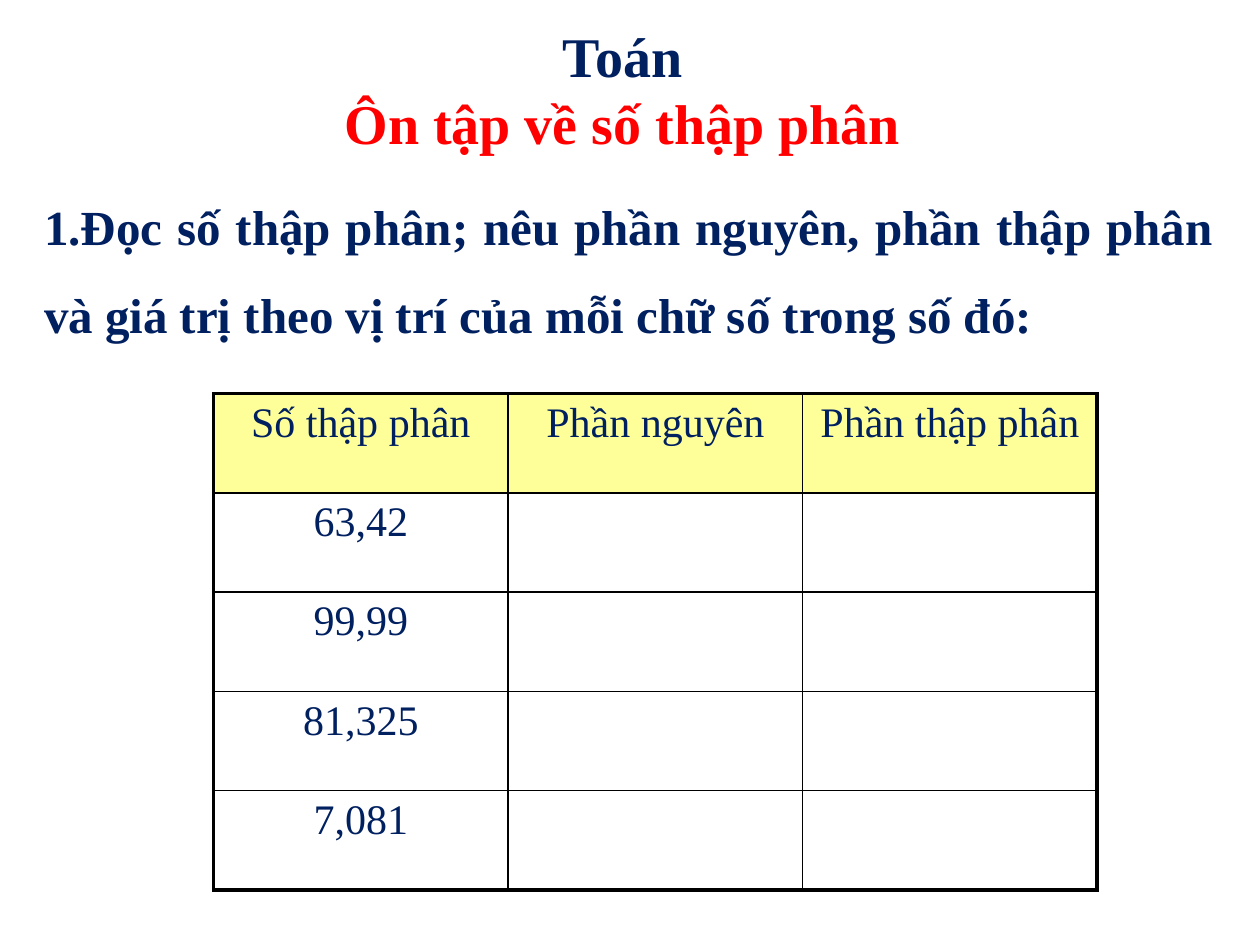
from lxml import etree
from pptx import Presentation
from pptx import util as u
from pptx.dml.color import RGBColor
from pptx.enum import text
from pptx.oxml import ns

COLORS = {"navy": "002060", "red": "FF0000", "header": "FFFF99", "border": "000000"}
HEADERS = ["Số thập phân", "Phần nguyên", "Phần thập phân"]
NUMBERS = ["63,42", "99,99", "81,325", "7,081"]
ALIGN = text.PP_ALIGN


def write(p, words, size=24, color="navy", bold=False, align=ALIGN.CENTER, spacing=1.0):
    p.alignment = align
    p.line_spacing = spacing
    p.space_before = u.Pt(0)
    r = p.add_run()
    r.text = words
    r.font.name = "Times New Roman"
    r.font.size = u.Pt(size)
    r.font.bold = bold
    r.font.color.rgb = RGBColor.from_string(COLORS[color])


def number_paragraph(p):
    """Number the paragraph 1. with no hanging indent."""
    pPr = p._p.get_or_add_pPr()
    pPr.set("marL", "0")
    pPr.set("indent", "0")
    etree.SubElement(pPr, ns.qn("a:buFont"), typeface="+mj-lt")
    etree.SubElement(pPr, ns.qn("a:buAutoNum"), type="arabicPeriod")


def add_border(cell, side, width):
    tcPr = cell._tc.get_or_add_tcPr()
    ln = etree.SubElement(tcPr, ns.qn(f"a:ln{side}"), w=str(u.Pt(width)))
    fill = etree.SubElement(ln, ns.qn("a:solidFill"))
    etree.SubElement(fill, ns.qn("a:srgbClr"), val=COLORS["border"])


class LessonSlide:
    thin, thick = 1, 2.25

    def __init__(self, prs):
        self.slide = prs.slides.add_slide(prs.slide_layouts[1])

    def frame(self, sp, left, top, width, height):
        """Place a placeholder and return its text frame, set to start at the top."""
        sp.left, sp.top, sp.width, sp.height = map(u.Pt, (left, top, width, height))
        tf = sp.text_frame
        tf.word_wrap = True
        tf.auto_size = text.MSO_AUTO_SIZE.NONE
        tf.vertical_anchor = text.MSO_ANCHOR.TOP
        return tf

    def title(self, subject, topic, *box):
        tf = self.frame(self.slide.shapes.title, *box)
        write(tf.paragraphs[0], subject, size=32, bold=True)
        write(tf.add_paragraph(), topic, size=32, bold=True, color="red")

    def question(self, words, *box):
        p = self.frame(self.slide.placeholders[1], *box).paragraphs[0]
        write(p, words, size=28, bold=True, align=ALIGN.JUSTIFY, spacing=1.5)
        number_paragraph(p)

    def table(self, rows, *box):
        n_rows, n_cols = len(rows), len(rows[0])
        table = self.slide.shapes.add_table(n_rows, n_cols, *map(u.Pt, box)).table
        table.first_row = table.horz_banding = False
        for i, row in enumerate(rows):
            for j, words in enumerate(row):
                cell = table.cell(i, j)
                outer = {"L": j == 0, "R": j == n_cols - 1,
                         "T": i == 0, "B": i == n_rows - 1}
                for side, is_outer in outer.items():
                    add_border(cell, side, self.thick if is_outer else self.thin)
                if i == 0:
                    cell.fill.solid()
                    cell.fill.fore_color.rgb = RGBColor.from_string(COLORS["header"])
                else:
                    cell.fill.background()
                if words:
                    write(cell.text_frame.paragraphs[0], words)


def main():
    prs = Presentation()
    prs.slide_width, prs.slide_height = u.Pt(720), u.Pt(540)
    lesson = LessonSlide(prs)
    lesson.title("Toán", "Ôn tập về số thập phân", 143, 8.5, 425.5, 124)
    lesson.question("Đọc số thập phân; nêu phần nguyên, phần thập phân và giá trị "
                    "theo vị trí của mỗi chữ số trong số đó:", 18, 92, 682, 103)
    lesson.table([HEADERS] + [[number, "", ""] for number in NUMBERS],
                 122, 225, 505, 283.5)
    prs.save("out.pptx")


if __name__ == "__main__":
    main()
